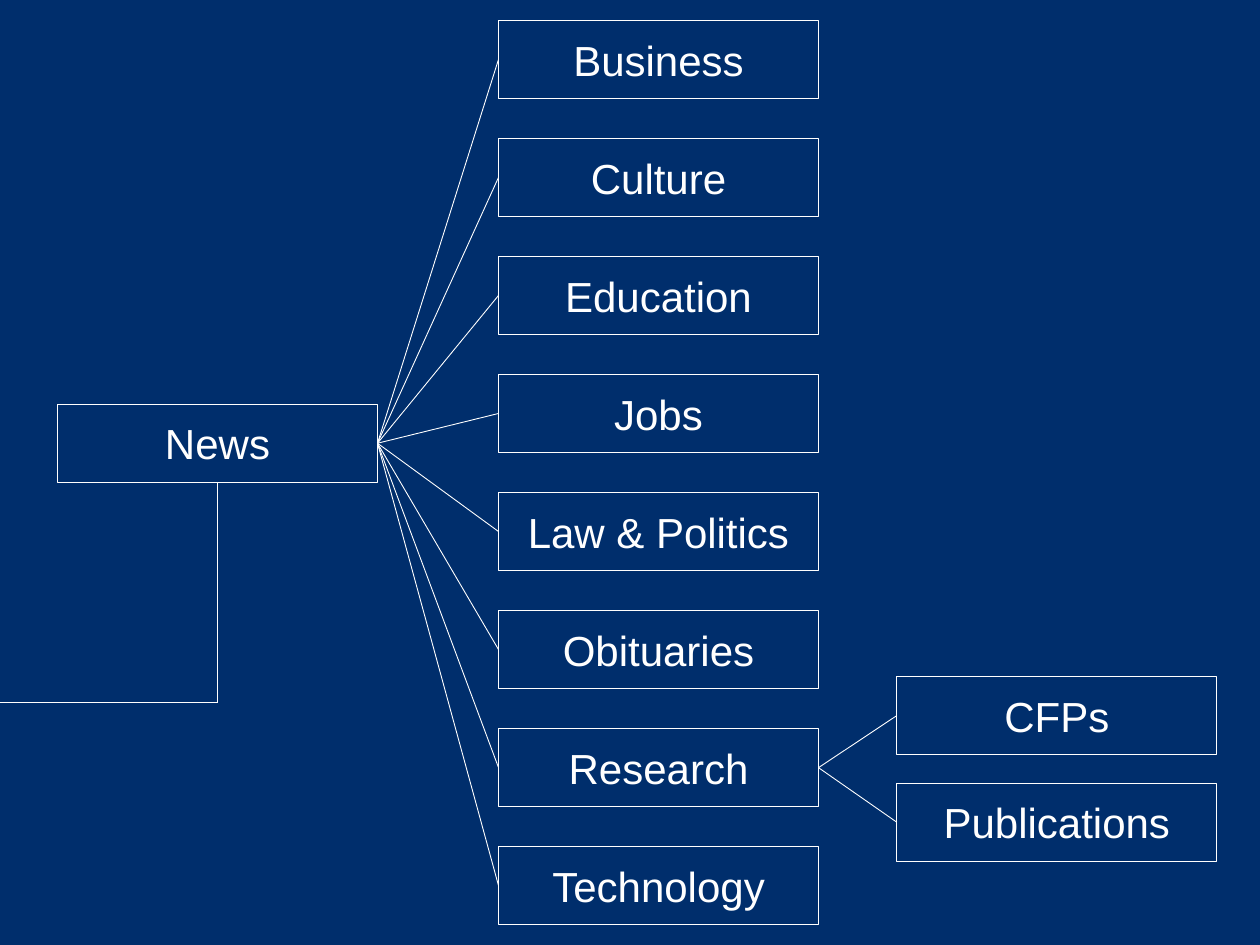
from dataclasses import dataclass

from lxml import etree
from pptx import Presentation
from pptx.dml.color import RGBColor
from pptx.enum import shapes, text
from pptx.oxml.ns import qn
from pptx.util import Cm, Inches, Pt

NAVY, WHITE = "002E6C", "FFFFFF"
BOX_WIDTH, BOX_HEIGHT = 6.45, 1.57
BOTTOM, LEFT, RIGHT = 2, 1, 3
LABEL_FORMAT = {"name": "Arial", "size": Pt(24)}


@dataclass
class Topic:
    label: str
    left: float
    top: float


def paint(colour_format, colour: str) -> None:
    colour_format.rgb = RGBColor.from_string(colour)


def style_line(line) -> None:
    line.width = Pt(0.5)
    paint(line.color, WHITE)


def stack(labels: list[str], left: float, top: float, pitch: float) -> list[Topic]:
    """Place labels in a column at an equal pitch, in centimetres."""
    return [Topic(label, left, top + row * pitch) for row, label in enumerate(labels)]


def draw_topic(slide, topic: Topic):
    box = slide.shapes.add_shape(
        shapes.MSO_SHAPE.RECTANGLE,
        Cm(topic.left), Cm(topic.top), Cm(BOX_WIDTH), Cm(BOX_HEIGHT))
    box.shadow.inherit = False
    box.fill.background()
    style_line(box.line)
    frame = box.text_frame
    frame.word_wrap = True
    frame.vertical_anchor = text.MSO_ANCHOR.MIDDLE
    paragraph = frame.paragraphs[0]
    paragraph.alignment = text.PP_ALIGN.CENTER
    run = paragraph.add_run()
    run.text = topic.label
    for attribute, value in LABEL_FORMAT.items():
        setattr(run.font, attribute, value)
    paint(run.font.color, WHITE)
    return box


def draw_line(slide, x1: float = 0, y1: float = 0, x2: float = 0, y2: float = 0):
    line = slide.shapes.add_connector(
        shapes.MSO_CONNECTOR.STRAIGHT, Cm(x1), Cm(y1), Cm(x2), Cm(y2))
    style_line(line.line)
    etree.SubElement(line._element.spPr, qn("a:effectLst"))
    return line


def draw_branches(slide, parent, children) -> None:
    for child in children:
        branch = draw_line(slide)
        branch.begin_connect(parent, RIGHT)
        branch.end_connect(child, LEFT)


def main() -> None:
    deck = Presentation()
    deck.slide_width, deck.slide_height = Inches(10), Inches(7.5)
    slide = deck.slides.add_slide(deck.slide_layouts[6])
    slide.background.fill.solid()
    paint(slide.background.fill.fore_color, NAVY)

    news_topic = Topic("News", 1.16, 8.15)
    sections = stack(
        ["Business", "Culture", "Education", "Jobs", "Law & Politics",
         "Obituaries", "Research", "Technology"], left=10.05, top=0.41, pitch=2.38)
    research_topics = stack(["CFPs", "Publications"], left=18.08, top=13.64, pitch=2.15)

    news = draw_topic(slide, news_topic)
    section_boxes = {topic.label: draw_topic(slide, topic) for topic in sections}
    research_boxes = [draw_topic(slide, topic) for topic in research_topics]
    draw_branches(slide, news, section_boxes.values())
    draw_branches(slide, section_boxes["Research"], research_boxes)

    # The trunk leads from News down and out past the left edge.
    trunk_x, trunk_y = news_topic.left + BOX_WIDTH / 2, 14.16
    trunk = draw_line(slide, x2=trunk_x, y2=trunk_y)
    trunk.begin_connect(news, BOTTOM)
    draw_line(slide, trunk_x, trunk_y, -0.43, trunk_y)

    deck.save("out.pptx")


if __name__ == "__main__":
    main()
